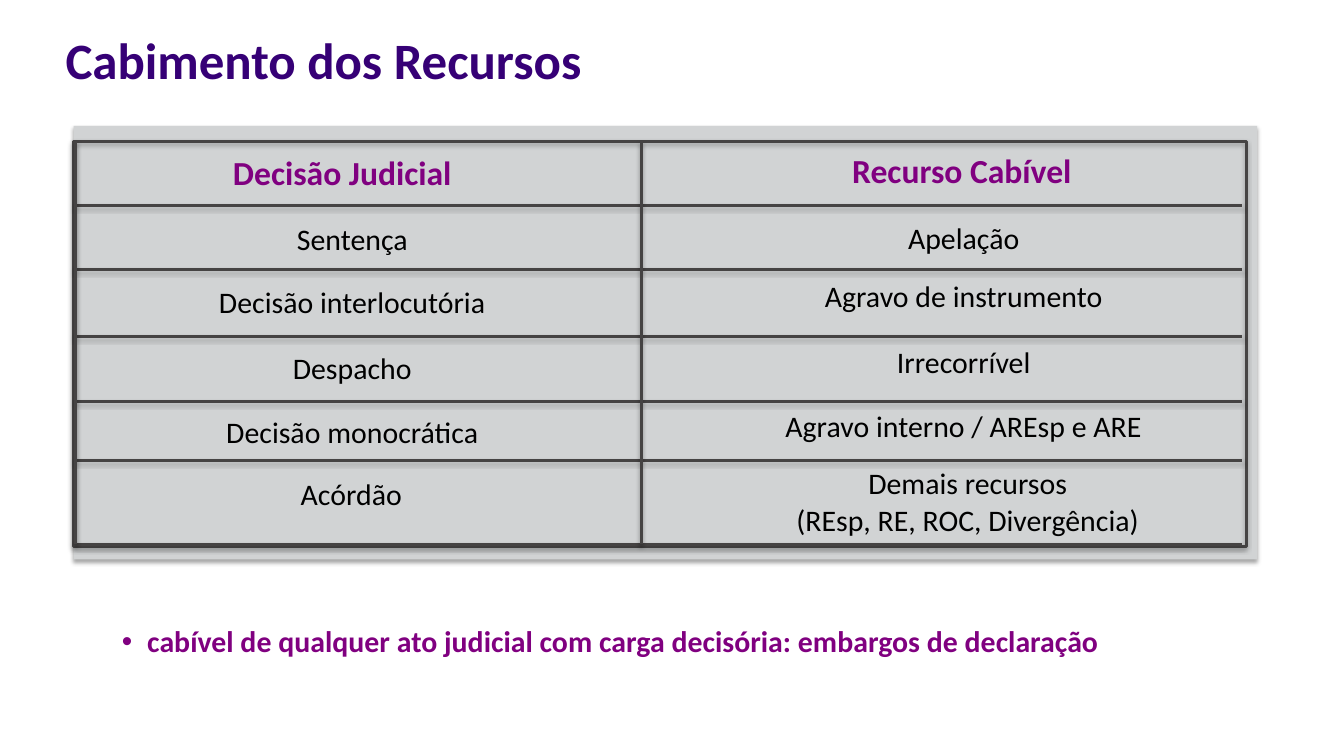
from lxml import etree
from pptx import Presentation
from pptx.dml.color import RGBColor
from pptx.enum.shapes import MSO_CONNECTOR, MSO_SHAPE
from pptx.enum.text import MSO_ANCHOR, MSO_AUTO_SIZE, PP_ALIGN
from pptx.oxml import parse_xml
from pptx.oxml.ns import nsdecls, qn
from pptx.util import Inches, Pt

RECT = MSO_SHAPE.RECTANGLE
STRAIGHT = MSO_CONNECTOR.STRAIGHT
TOP, MIDDLE = MSO_ANCHOR.TOP, MSO_ANCHOR.MIDDLE
LEFT, CENTER = PP_ALIGN.LEFT, PP_ALIGN.CENTER
NO_FIT = MSO_AUTO_SIZE.NONE

INDIGO = RGBColor(0x36, 0x00, 0x76)
PURPLE = RGBColor(0x80, 0x00, 0x80)
BLACK = RGBColor(0x00, 0x00, 0x00)
PANEL_GREY = RGBColor(0xD1, 0xD3, 0xD4)
RULE_GREY = RGBColor(0x45, 0x43, 0x43)

FONT = "Calibri"
BODY_SIZE = 21.33
RULE_WIDTH = Pt(2)

ROW_HEIGHTS = [0.64, 0.63, 0.67, 0.64, 0.59, 0.83]
COLUMN_WIDTHS = [5.63, 5.96]
# Each cell: text, top margin, sideways shift of its centre
ROWS = [
    [("Decisão Judicial", 0.12, -0.15), ("Recurso Cabível", 0.1, 0.2)],
    [("Sentença", 0.16, -0.05), ("Apelação", 0.15, 0.22)],
    [("Decisão interlocutória", 0.16, -0.05),
     ("Agravo de instrumento", 0.1, 0.22)],
    [("Despacho", 0.14, -0.05), ("Irrecorrível", 0.08, 0.22)],
    [("Decisão monocrática", 0.14, -0.05),
     ("Agravo interno / AREsp e ARE", 0.08, 0.22)],
    [("Acórdão", 0.16, -0.06),
     ("Demais recursos\n(REsp, RE, ROC, Divergência)", 0.06, 0.26)],
]


def write_text(tf, text, size=BODY_SIZE, color=BLACK, bold=False, align=CENTER):
    """Fill a text frame, one paragraph per line of text."""
    tf.word_wrap = True
    for i, line in enumerate(text.split("\n")):
        p = tf.paragraphs[0] if i == 0 else tf.add_paragraph()
        p.alignment = align
        p.space_before = Pt(0)
        r = p.add_run()
        r.text = line
        r.font.name = FONT
        r.font.size = Pt(size)
        r.font.bold = bold
        r.font.color.rgb = color


def place(sp, left, top, width, height):
    sp.left, sp.top = Inches(left), Inches(top)
    sp.width, sp.height = Inches(width), Inches(height)


def add_soft_shadow(sp):
    effects = etree.SubElement(sp._element.spPr, qn("a:effectLst"))
    effects.append(parse_xml(
        f'<a:outerShdw {nsdecls("a")} blurRad="{Pt(3)}" dist="{Pt(1.8)}" '
        'dir="5400000" rotWithShape="0"><a:srgbClr val="000000">'
        '<a:alpha val="35000"/></a:srgbClr></a:outerShdw>'))


def style_rule(sp):
    sp.line.color.rgb = RULE_GREY
    sp.line.width = RULE_WIDTH
    add_soft_shadow(sp)


def clear_borders(cell):
    tc_pr = cell._tc.get_or_add_tcPr()
    for i, side in enumerate(("lnL", "lnR", "lnT", "lnB")):
        tc_pr.insert(i, parse_xml(
            f'<a:{side} {nsdecls("a")}><a:noFill/></a:{side}>'))


def add_title(s, left, top, width, height):
    sp = s.shapes.title
    place(sp, left, top, width, height)
    tf = sp.text_frame
    tf.auto_size = NO_FIT
    tf.vertical_anchor = MIDDLE
    tf.margin_left = tf.margin_right = tf.margin_top = tf.margin_bottom = 0
    write_text(tf, "Cabimento dos Recursos", size=36.4, color=INDIGO,
               bold=True, align=LEFT)


def add_panel(s, left, top, width, height):
    """Grey panel with an outlined frame inside it."""
    panel = s.shapes.add_shape(RECT, Inches(left), Inches(top),
                               Inches(width), Inches(height))
    panel.fill.solid()
    panel.fill.fore_color.rgb = PANEL_GREY
    panel.line.fill.background()
    add_soft_shadow(panel)

    frame = s.shapes.add_shape(RECT, Inches(left), Inches(top + 0.15),
                               Inches(width - 0.11), Inches(height - 0.28))
    frame.fill.background()
    style_rule(frame)


def add_rules(s, left, top):
    """Shadowed rules under every row, beside and between the columns."""
    right, bottom = left + sum(COLUMN_WIDTHS), top + sum(ROW_HEIGHTS)
    ends = []
    for i in range(1, len(ROW_HEIGHTS) + 1):
        y = top + sum(ROW_HEIGHTS[:i])
        ends.append((left, y, right, y))
    for x in (left + 0.02, left + COLUMN_WIDTHS[0]):
        ends.append((x, top, x, bottom))
    for points in ends:
        style_rule(s.shapes.add_connector(STRAIGHT, *map(Inches, points)))


def add_appeals_table(s, left, top):
    table = s.shapes.add_table(
        len(ROWS), len(COLUMN_WIDTHS), Inches(left), Inches(top),
        Inches(sum(COLUMN_WIDTHS)), Inches(sum(ROW_HEIGHTS))).table
    table.first_row = table.horz_banding = False
    for column, width in zip(table.columns, COLUMN_WIDTHS):
        column.width = Inches(width)
    for r, (height, entries) in enumerate(zip(ROW_HEIGHTS, ROWS)):
        table.rows[r].height = Inches(height)
        style = dict(size=24, color=PURPLE, bold=True) if r == 0 else {}
        for c, (text, margin_top, shift) in enumerate(entries):
            cell = table.cell(r, c)
            cell.fill.background()
            cell.vertical_anchor = TOP
            cell.margin_left = Inches(max(2 * shift, 0))
            cell.margin_right = Inches(max(-2 * shift, 0))
            cell.margin_top = Inches(margin_top)
            cell.margin_bottom = 0
            clear_borders(cell)
            write_text(cell.text_frame, text, **style)


def add_note(s, left, top, width, height):
    sp = s.placeholders[1]
    place(sp, left, top, width, height)
    tf = sp.text_frame
    tf.auto_size = NO_FIT
    write_text(tf, "cabível de qualquer ato judicial com carga decisória: "
               "embargos de declaração", color=PURPLE, bold=True, align=LEFT)
    # Bullet with a hanging indent
    p_pr = tf.paragraphs[0]._p.get_or_add_pPr()
    p_pr.set("marL", str(Inches(0.25)))
    p_pr.set("indent", str(-Inches(0.25)))
    etree.SubElement(p_pr, qn("a:buFont")).set("typeface", "Arial")
    etree.SubElement(p_pr, qn("a:buChar")).set("char", "•")


def main():
    prs = Presentation()
    prs.slide_width, prs.slide_height = Inches(13.33), Inches(7.5)
    s = prs.slides.add_slide(prs.slide_layouts[1])
    add_title(s, 0.65, 0.11, 11.26, 0.95)
    add_panel(s, 0.73, 1.25, 11.74, 4.3)
    add_rules(s, 0.73, 1.4)
    add_appeals_table(s, 0.73, 1.4)
    add_note(s, 1.11, 6.13, 10.79, 0.46)
    prs.save("out.pptx")


if __name__ == "__main__":
    main()
